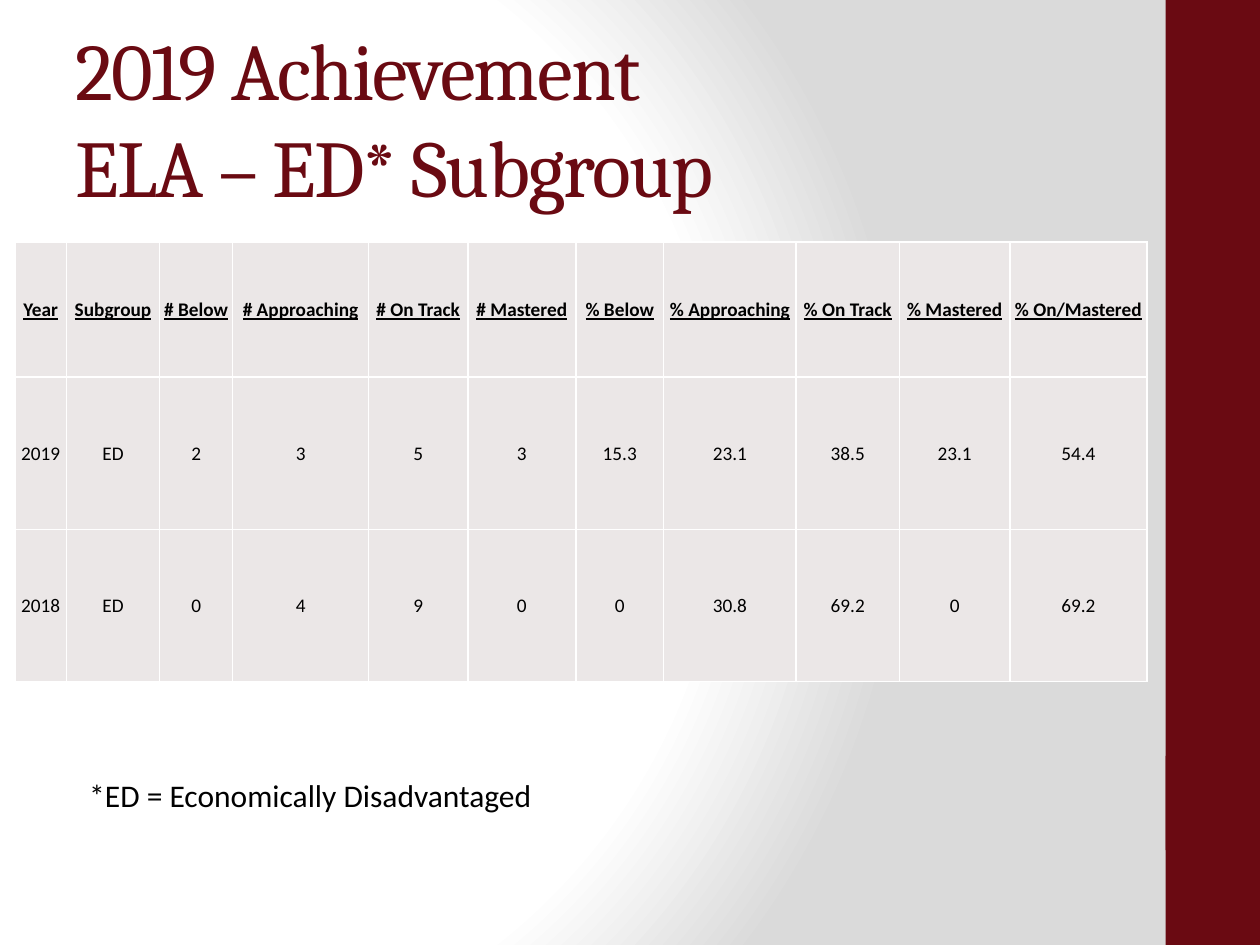
from typing import NamedTuple

from lxml.etree import SubElement
from pptx import Presentation
from pptx.dml.color import RGBColor
from pptx.enum.shapes import MSO_SHAPE as Shape
from pptx.enum.text import MSO_ANCHOR as Anchor, MSO_AUTO_SIZE as AutoSize, PP_ALIGN as Align
from pptx.oxml import parse_xml
from pptx.oxml.ns import qn
from pptx.slide import Slide
from pptx.util import Cm, Pt

MAROON = RGBColor(0x6A, 0x0A, 0x12)
BLACK = RGBColor(0, 0, 0)
WHITE = RGBColor(0xFF, 0xFF, 0xFF)
SILVER = RGBColor(0xDA, 0xDA, 0xDA)
CELL_GRAY = RGBColor(0xEB, 0xE7, 0xE7)

HEADINGS = ["Year", "Subgroup", "# Below", "# Approaching", "# On Track", "# Mastered",
            "% Below", "% Approaching", "% On Track", "% Mastered", "% On/Mastered"]
RESULTS = [
    ["2019", "ED", "2", "3", "5", "3", "15.3", "23.1", "38.5", "23.1", "54.4"],
    ["2018", "ED", "0", "4", "9", "0", "0", "30.8", "69.2", "0", "69.2"],
]
COLUMN_WIDTHS = [1.04, 1.88, 1.47, 2.74, 2.0, 2.18, 1.77, 2.67, 2.08, 2.23, 2.76]
ROW_HEIGHTS = [2.72, 3.07, 3.07]

TITLE_FONT = {"name": "Cambria", "size": Pt(46)}
NOTE_FONT = {"name": "Calibri", "size": Pt(18)}
BODY_FONT = {"name": "Calibri", "size": Pt(11), "bold": False, "underline": False}
HEADING_FONT = BODY_FONT | {"bold": True, "underline": True}
CELL_FORMAT = {"vertical_anchor": Anchor.MIDDLE, "margin_left": Cm(0.03),
               "margin_right": Cm(0.03), "margin_top": Cm(0.03), "margin_bottom": Cm(0)}


class Area(NamedTuple):
    left: float
    top: float
    width: float
    height: float

    def lengths(self) -> list[Cm]:
        return [Cm(value) for value in self]


SIDE_BANDS = [Area(23.5, 0, 1.9, 19.05), Area(23.5, 15.24, 1.9, 1.9)]
TITLE_AREA = Area(1.27, 0.76, 21.16, 3.18)
NOTE_AREA = Area(1.55, 15.52, 9.53, 2.57)
TABLE_AREA = Area(0.3, 4.88, sum(COLUMN_WIDTHS), sum(ROW_HEIGHTS))


def apply(target, values: dict) -> None:
    for name, value in values.items():
        setattr(target, name, value)


def style_font(font, values: dict, color: RGBColor) -> None:
    apply(font, values)
    font.color.rgb = color


def paint_background(page: Slide) -> None:
    stops = "".join(
        f'<a:gs pos="{share * 1000}"><a:srgbClr val="{color}"/></a:gs>'
        for share, color in [(0, WHITE), (75, WHITE), (100, SILVER)])
    page.element.cSld.insert(0, parse_xml(
        '<p:bg xmlns:p="http://schemas.openxmlformats.org/presentationml/2006/main"'
        ' xmlns:a="http://schemas.openxmlformats.org/drawingml/2006/main"><p:bgPr>'
        f'<a:gradFill rotWithShape="1"><a:gsLst>{stops}</a:gsLst><a:path path="circle">'
        '<a:fillToRect l="20000" t="50000" r="100000" b="50000"/></a:path></a:gradFill>'
        '<a:effectLst/></p:bgPr></p:bg>'))


def add_band(page: Slide, area: Area) -> None:
    band = page.shapes.add_shape(Shape.RECTANGLE, *area.lengths())
    band.shadow.inherit = False
    band.fill.solid()
    band.fill.fore_color.rgb = MAROON
    band.line.fill.background()


def add_text(page: Slide, area: Area, text: str, font: dict, color: RGBColor, frame: dict):
    box = page.shapes.add_textbox(*area.lengths())
    apply(box.text_frame, frame)
    para = box.text_frame.paragraphs[0]
    para.text = text
    for span in para.runs:
        style_font(span.font, font, color)
    return para


def add_borders(cell) -> None:
    properties = cell._tc.get_or_add_tcPr()
    for side in ("lnL", "lnR", "lnT", "lnB"):
        line = SubElement(properties, qn(f"a:{side}"), w=str(Pt(1)))
        SubElement(SubElement(line, qn("a:solidFill")), qn("a:srgbClr"), val=str(WHITE))


def fill_cell(cell, text: str, font: dict) -> None:
    add_borders(cell)
    apply(cell, CELL_FORMAT)
    cell.fill.solid()
    cell.fill.fore_color.rgb = CELL_GRAY
    para = cell.text_frame.paragraphs[0]
    para.alignment = Align.CENTER
    span = para.add_run()
    span.text = text
    style_font(span.font, font, BLACK)


def add_results(page: Slide) -> None:
    rows = [HEADINGS, *RESULTS]
    table = page.shapes.add_table(len(rows), len(HEADINGS), *TABLE_AREA.lengths()).table
    apply(table, {"first_row": False, "horz_banding": False})
    for column, width in zip(table.columns, COLUMN_WIDTHS):
        column.width = Cm(width)
    for index, (row, height, texts) in enumerate(zip(table.rows, ROW_HEIGHTS, rows)):
        row.height = Cm(height)
        for cell, text in zip(row.cells, texts):
            fill_cell(cell, text, BODY_FONT if index else HEADING_FONT)


def main() -> None:
    deck = Presentation()
    apply(deck, {"slide_width": Cm(25.4), "slide_height": Cm(19.05)})
    page = deck.slides.add_slide(deck.slide_layouts[6])
    paint_background(page)
    for area in SIDE_BANDS:
        add_band(page, area)
    title = add_text(page, TITLE_AREA, "2019 Achievement \vELA – ED* Subgroup", TITLE_FONT, MAROON,
                     {"word_wrap": True, "vertical_anchor": Anchor.MIDDLE})
    for span in title.runs:
        span.font._element.set("spc", "-100")
    add_text(page, NOTE_AREA, "*ED = Economically Disadvantaged", NOTE_FONT, BLACK,
             {"word_wrap": False, "auto_size": AutoSize.SHAPE_TO_FIT_TEXT})
    add_results(page)
    deck.save("out.pptx")


if __name__ == "__main__":
    main()
